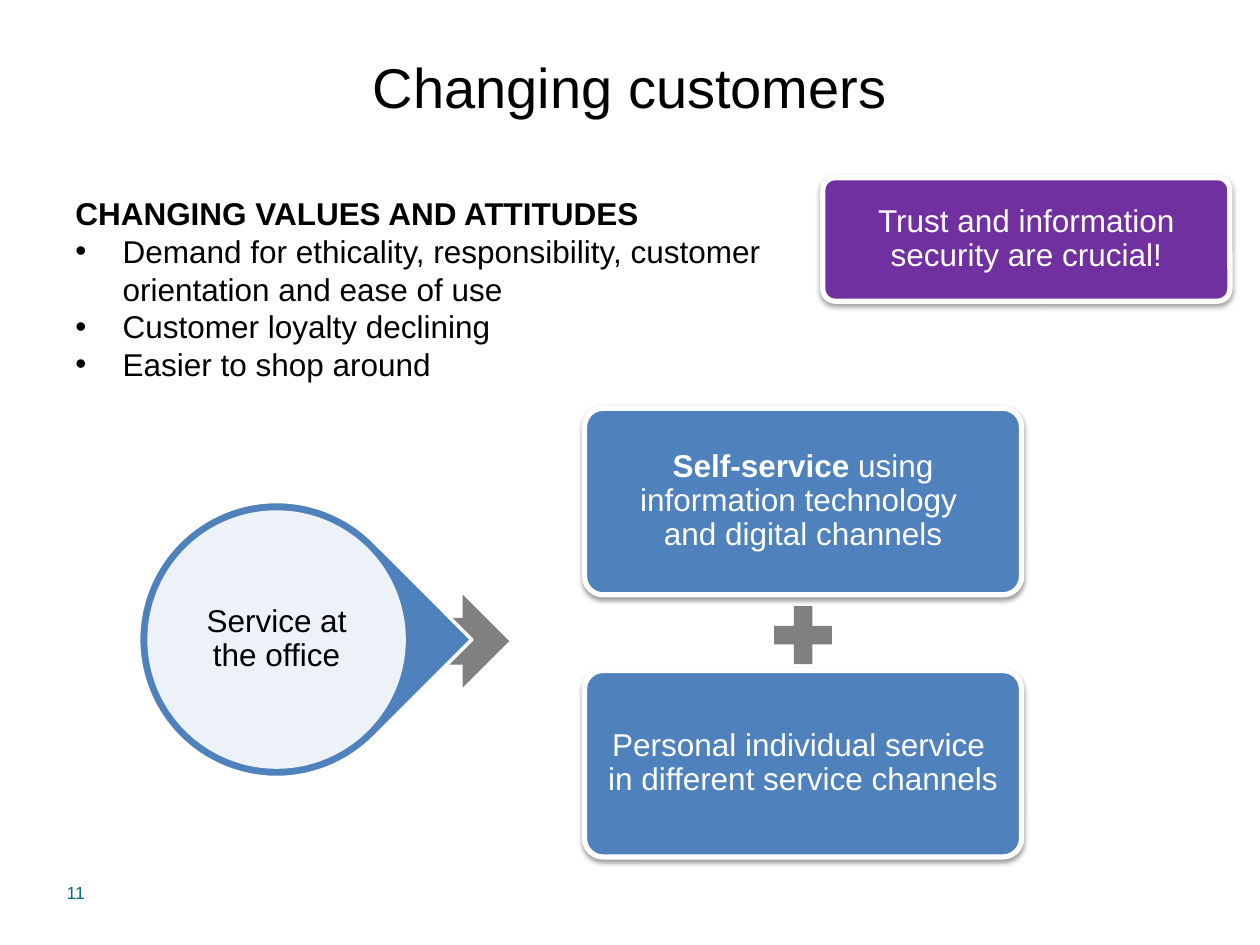
from dataclasses import dataclass

from lxml import etree
from pptx import Presentation
from pptx.dml.color import RGBColor
from pptx.enum.shapes import MSO_SHAPE
from pptx.enum.text import MSO_ANCHOR, PP_ALIGN
from pptx.oxml.ns import qn
from pptx.util import Pt

CENTER, LEFT = PP_ALIGN.CENTER, PP_ALIGN.LEFT
MIDDLE, TOP = MSO_ANCHOR.MIDDLE, MSO_ANCHOR.TOP
ARROW, PLUS = MSO_SHAPE.RIGHT_ARROW, MSO_SHAPE.MATH_PLUS
TEARDROP, OVAL, CARD = MSO_SHAPE.TEAR, MSO_SHAPE.OVAL, MSO_SHAPE.ROUNDED_RECTANGLE


@dataclass(frozen=True)
class Theme:
    """Colours, font and type sizes of the slide."""
    font: str = "Arial"
    black: str = "000000"
    white: str = "FFFFFF"
    blue: str = "4F81BD"
    purple: str = "7030A0"
    gray: str = "808080"
    teal: str = "076E75"
    title_size: float = 32
    body_size: float = 18
    number_size: float = 10


THEME = Theme()


def style_font(font, size, color, bold=False):
    """Apply the theme font with a size, colour and weight."""
    font.name, font.size, font.bold = THEME.font, Pt(size), bold
    font.color.rgb = RGBColor.from_string(color)


def add_text_box(slide, box, paragraphs, size, color, align=LEFT, anchor=TOP):
    """Add a wrapping text box with one style and return its paragraphs."""
    text_frame = slide.shapes.add_textbox(*map(Pt, box)).text_frame
    text_frame.word_wrap = True
    text_frame.vertical_anchor = anchor
    text_frame.text = "\n".join(paragraphs)
    for paragraph in text_frame.paragraphs:
        paragraph.alignment = align
        for run in paragraph.runs:
            style_font(run.font, size, color)
    return text_frame.paragraphs


def add_figure(slide, kind, box, fill, line_width=0):
    """Add a filled preset shape with an optional white outline."""
    shape = slide.shapes.add_shape(kind, *map(Pt, box))
    shape.shadow.inherit = False
    shape.fill.solid()
    shape.fill.fore_color.rgb = RGBColor.from_string(fill)
    if line_width:
        shape.line.color.rgb = RGBColor.from_string(THEME.white)
        shape.line.width = Pt(line_width)
    else:
        shape.line.fill.background()
    return shape


def fill_label(shape, lines, color, inset):
    """Write centred lines, each a list of (text, bold) parts, in a shape."""
    text_frame = shape.text_frame
    text_frame.word_wrap = True
    text_frame.vertical_anchor = MIDDLE
    text_frame.margin_left = text_frame.margin_right = Pt(inset)
    text_frame.margin_top = text_frame.margin_bottom = Pt(inset)
    paragraph = text_frame.paragraphs[0]
    paragraph.alignment = CENTER
    paragraph.line_spacing = 0.9
    for index, parts in enumerate(lines):
        if index:
            paragraph.add_line_break()
        for text, bold in parts:
            run = paragraph.add_run()
            run.text = text
            style_font(run.font, THEME.body_size, color, bold)


def add_soft_shadow(shape):
    """Give a shape a soft shadow falling straight down."""
    effects = shape._element.spPr.find(qn("a:effectLst"))
    shadow = etree.SubElement(
        effects, qn("a:outerShdw"), blurRad=str(Pt(3.1)), dist=str(Pt(1.6)),
        dir="5400000", rotWithShape="0")
    color = etree.SubElement(shadow, qn("a:srgbClr"), val=THEME.black)
    etree.SubElement(color, qn("a:alpha"), val="38000")


def add_card(slide, box, fill, lines):
    """Add a rounded card with white outline, shadow and label."""
    card = add_figure(slide, CARD, box, fill, 3)
    card.adjustments[0] = 0.1
    add_soft_shadow(card)
    fill_label(card, lines, THEME.white, 5)


def add_values(slide, box, heading, bullets):
    """Add the bold heading and its bulleted list."""
    first, *items = add_text_box(
        slide, box, [heading, *bullets], THEME.body_size, THEME.black)
    first.line_spacing = 0.8
    first.runs[0].font.bold = True
    for item in items:
        item.line_spacing = Pt(21.6)
        properties = item._p.get_or_add_pPr()
        properties.set("marL", str(Pt(27)))
        properties.set("indent", str(Pt(-27)))
        etree.SubElement(properties, qn("a:buFont"), typeface=THEME.font)
        etree.SubElement(properties, qn("a:buChar"), char="•")


def add_office(slide, box):
    """Add the office circle, whose pointer and arrow lead to the right."""
    left, top, size, _ = box
    ring = 5
    arrow_width, arrow_height = 118.8, 53.3
    add_figure(slide, ARROW, (left + 93, top + (size - arrow_height) / 2 + 1,
                              arrow_width, arrow_height), THEME.gray)
    pointer = add_figure(slide, TEARDROP, box, THEME.blue, 2)
    pointer.rotation = 45
    inner = size - 2 * ring
    circle = add_figure(
        slide, OVAL, (left + ring, top + ring, inner, inner), THEME.white)
    color = circle.fill._xPr.find(qn("a:solidFill"))[0]
    etree.SubElement(color, qn("a:alpha"), val="90000")
    fill_label(circle, [[("Service at the office", False)]], THEME.black, ring)


def add_channels(slide, box):
    """Stack the two service cards with a plus sign between them."""
    left, top, width, height = box
    card_height, plus_size = 106.6, 45
    labels = [
        [[("Self-service ", True), ("using information technology ", False)],
         [("and digital channels", False)]],
        [[("Personal individual service ", False)],
         [("in different service channels", False)]],
    ]
    add_figure(slide, PLUS, (left + (width - plus_size) / 2,
                             top + (height - plus_size) / 2 + 1.5,
                             plus_size, plus_size), THEME.gray)
    for index, lines in enumerate(labels):
        card_top = top + index * (height - card_height)
        add_card(slide, (left, card_top, width, card_height), THEME.blue, lines)


def build_slide(presentation):
    """Lay out the regions of the slide."""
    slide = presentation.slides.add_slide(presentation.slide_layouts[6])
    add_text_box(slide, (36, 4.3, 648, 90), ["Changing customers"],
                 THEME.title_size, THEME.black, CENTER, MIDDLE)
    add_values(slide, (36, 111.6, 477.4, 108), "CHANGING VALUES AND ATTITUDES", [
        "Demand for ethicality, responsibility, customer orientation and ease of use",
        "Customer loyalty declining",
        "Easier to shop around",
    ])
    add_office(slide, (79.2, 286.6, 157.7, 157.7))
    add_channels(slide, (334, 233.3, 249.8, 256.4))
    add_card(slide, (470.2, 101.5, 232.6, 70.6), THEME.purple,
             [[("Trust and information security are crucial!", False)]])
    add_text_box(slide, (31, 500.4, 167.8, 28.8), ["11"],
                 THEME.number_size, THEME.teal)


def main():
    """Build and save the presentation."""
    presentation = Presentation()
    presentation.slide_width, presentation.slide_height = Pt(720), Pt(540)
    build_slide(presentation)
    presentation.save("out.pptx")


if __name__ == "__main__":
    main()
